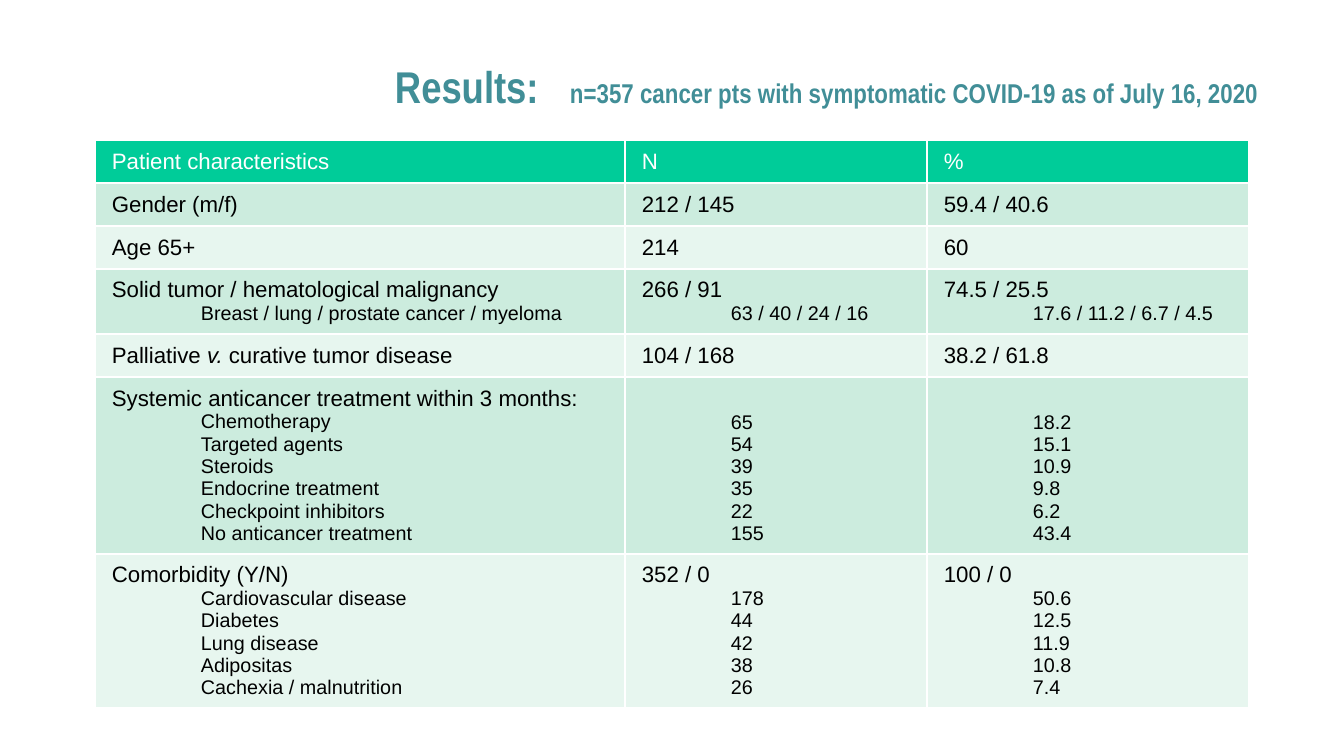
from dataclasses import dataclass

from lxml import etree
from pptx import Presentation, util as u
from pptx.dml.color import RGBColor
from pptx.enum import text
from pptx.oxml import ns

PX = 5143  # EMU in one px


@dataclass(frozen=True)
class Theme:
    teal: str = "418E97"
    head: str = "00CC99"
    bands: tuple = ("E7F6EF", "CCECDE")
    white: str = "FFFFFF"
    black: str = "000000"
    title: int = 18
    note: int = 11
    main: int = 9
    sub: int = 8
    body: str = "Arial"
    narrow: str = "Arial Narrow"


T = Theme()
COLS = (530, 302, 322)
ROWS = (43, 42, 43, 65, 43, 176, 154)
# One tuple per row; a cell is its main line followed by indented lines.
# Text between asterisks is italic.
DATA = (
    (["Patient characteristics"], ["N"], ["%"]),
    (["Gender (m/f)"], ["212 / 145"], ["59.4 / 40.6"]),
    (["Age 65+"], ["214"], ["60"]),
    (["Solid tumor / hematological malignancy",
      "Breast / lung / prostate cancer / myeloma"],
     ["266 / 91", "63 / 40 / 24 / 16"],
     ["74.5 / 25.5", "17.6 / 11.2 / 6.7 / 4.5"]),
    (["Palliative *v.* curative tumor disease"],
     ["104 / 168"], ["38.2 / 61.8"]),
    (["Systemic anticancer treatment within 3 months:", "Chemotherapy",
      "Targeted agents", "Steroids", "Endocrine treatment",
      "Checkpoint inhibitors", "No anticancer treatment"],
     ["", "65", "54", "39", "35", "22", "155"],
     ["", "18.2", "15.1", "10.9", "9.8", "6.2", "43.4"]),
    (["Comorbidity (Y/N)", "Cardiovascular disease", "Diabetes",
      "Lung disease", "Adipositas", "Cachexia / malnutrition"],
     ["352 / 0", "178", "44", "42", "38", "26"],
     ["100 / 0", "50.6", "12.5", "11.9", "10.8", "7.4"]),
)


def px(n):
    return u.Emu(n * PX)


def apply(item, **form):
    for name, value in form.items():
        setattr(item, name, value)


def add_run(para, words, size, color, face, **form):
    run = para.add_run()
    run.text = words
    apply(run.font, size=u.Pt(size), name=face, **form)
    run.font.color.rgb = RGBColor.from_string(color)


def add_tab(para, pos):
    tabs = etree.SubElement(para._p.get_or_add_pPr(), ns.qn("a:tabLst"))
    etree.SubElement(tabs, ns.qn("a:tab"), pos=str(px(pos)), algn="l")


def indent(para, left):
    props = para._p.get_or_add_pPr()
    props.set("marL", str(px(left)))
    props.set("indent", "0")


def add_title(slide):
    box = slide.shapes.title
    apply(box, left=px(379), top=px(55), width=px(916), height=px(55))
    frame = box.text_frame
    apply(frame, word_wrap=True, auto_size=text.MSO_AUTO_SIZE.NONE,
          vertical_anchor=text.MSO_ANCHOR.TOP, margin_left=px(16),
          margin_right=px(16), margin_top=px(9), margin_bottom=px(9))
    para = frame.paragraphs[0]
    add_tab(para, 175)
    apply(para, alignment=text.PP_ALIGN.LEFT, line_spacing=0.93)
    add_run(para, "Results:\t", T.title, T.teal, T.narrow, bold=True)
    add_run(para, "n=357 cancer pts with symptomatic COVID-19 as of July 16, 2020",
            T.note, T.teal, T.narrow, bold=True)


def add_edges(cell):
    props = cell._tc.get_or_add_tcPr()
    for side in "LRTB":
        line = etree.SubElement(props, ns.qn(f"a:ln{side}"), w=str(u.Pt(1)))
        fill = etree.SubElement(line, ns.qn("a:solidFill"))
        etree.SubElement(fill, ns.qn("a:srgbClr"), val=T.white)


def fill_cell(cell, lines, back, color):
    add_edges(cell)
    cell.fill.solid()
    cell.fill.fore_color.rgb = RGBColor.from_string(back)
    apply(cell, margin_left=px(17), margin_right=px(17),
          margin_top=px(9 if lines[0] else 34), margin_bottom=px(9))
    frame = cell.text_frame
    shown = [(n, line) for n, line in enumerate(lines) if line]
    for i, (level, line) in enumerate(shown):
        para = frame.add_paragraph() if i else frame.paragraphs[0]
        if level:
            indent(para, 89)
        size = T.sub if level else T.main
        for k, part in enumerate(line.split("*")):
            add_run(para, part, size, color, T.body,
                    bold=False, italic=k % 2 == 1)


def add_grid(slide):
    frame = slide.shapes.add_table(len(ROWS), len(COLS), px(95), px(140),
                                   px(sum(COLS)), px(sum(ROWS)))
    grid = frame.table
    apply(grid, first_row=False, horz_banding=False)
    for col, width in zip(grid.columns, COLS):
        col.width = px(width)
    for row, height in zip(grid.rows, ROWS):
        row.height = px(height)
    for r, row in enumerate(DATA):
        back = T.bands[r % 2] if r else T.head
        color = T.black if r else T.white
        for c, lines in enumerate(row):
            fill_cell(grid.cell(r, c), lines, back, color)


def main():
    deck = Presentation()
    apply(deck, slide_width=px(1344), slide_height=px(756))
    slide = deck.slides.add_slide(deck.slide_layouts[5])
    add_title(slide)
    add_grid(slide)
    deck.save("out.pptx")


if __name__ == "__main__":
    main()
